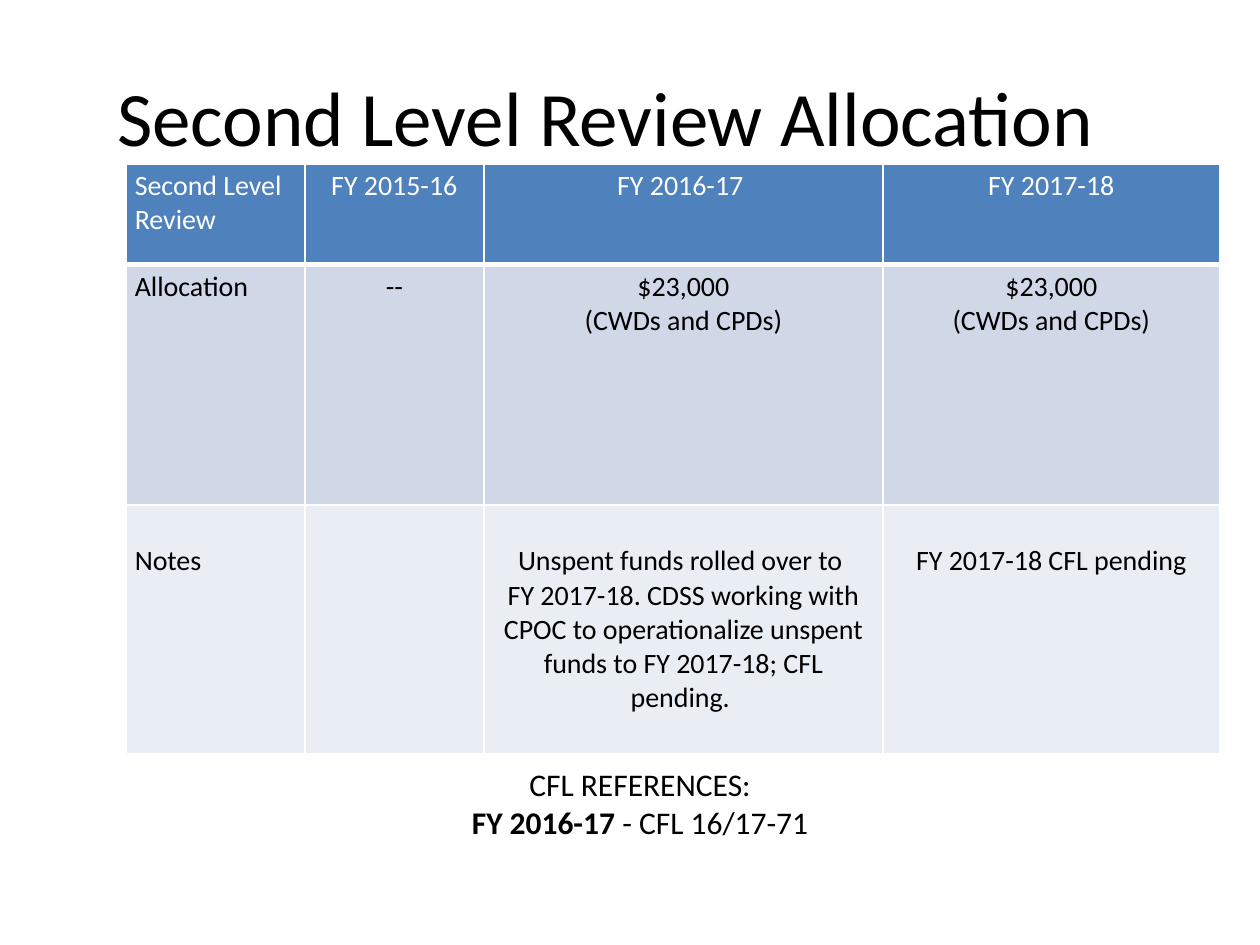
from pptx import Presentation
from pptx.dml.color import RGBColor
from pptx.enum.text import MSO_ANCHOR, PP_ALIGN
from pptx.oxml import parse_xml
from pptx.oxml.ns import nsdecls
from pptx.util import Inches, Pt

BLACK = RGBColor(0x00, 0x00, 0x00)
WHITE = RGBColor(0xFF, 0xFF, 0xFF)
HEADER_BLUE = RGBColor(0x4F, 0x81, 0xBD)
BAND_DARK = RGBColor(0xD0, 0xD8, 0xE8)
BAND_LIGHT = RGBColor(0xE9, 0xED, 0xF4)


def add_text(p, text, size=16, color=BLACK, bold=False, align=PP_ALIGN.LEFT):
    p.alignment = align
    r = p.add_run()
    r.text = text
    r.font.name = "Calibri"
    r.font.size = Pt(size)
    r.font.bold = bold
    r.font.color.rgb = color


def set_borders(cell, bottom):
    tcPr = cell._tc.get_or_add_tcPr()
    for i, (side, width) in enumerate((("L", 1), ("R", 1), ("T", 1), ("B", bottom))):
        tcPr.insert(i, parse_xml(
            f'<a:ln{side} {nsdecls("a")} w="{Pt(width)}"><a:solidFill>'
            f'<a:srgbClr val="{WHITE}"/></a:solidFill></a:ln{side}>'))


prs = Presentation()
prs.slide_width, prs.slide_height = Inches(10), Inches(7.5)
s = prs.slides.add_slide(prs.slide_layouts[5])

# Title
title = s.shapes.title
title.left, title.top = Inches(0.83), Inches(0.29)
title.width, title.height = Inches(8.83), Inches(1.25)
title.text_frame.vertical_anchor = MSO_ANCHOR.MIDDLE
add_text(title.text_frame.paragraphs[0], "Second Level Review Allocation", size=44)

# Allocation table: one list of paragraphs per cell
allocation = ["$23,000", "(CWDs and CPDs)"]
rows = [
    [["Second Level Review"], ["FY 2015-16"], ["FY 2016-17 "], ["FY 2017-18"]],
    [["Allocation"], ["--"], allocation, allocation],
    [["Notes"], [],
     ["Unspent funds rolled over to ",
      "FY 2017-18. CDSS working with CPOC to operationalize unspent "
      "funds to FY 2017-18; CFL pending. "],
     ["FY 2017-18 CFL pending"]],
]
col_widths = [1.42, 1.42, 3.17, 2.67]
# Height, fill, text colour, top margin and bottom border of each row
row_formats = [
    (0.8, HEADER_BLUE, WHITE, 0.04, 3),
    (1.91, BAND_DARK, BLACK, 0.04, 1),
    (1.97, BAND_LIGHT, BLACK, 0.31, 1),
]
table = s.shapes.add_table(3, 4, Inches(1), Inches(1.3),
                           Inches(8.67), Inches(4.68)).table
for column, width in zip(table.columns, col_widths):
    column.width = Inches(width)
for i, (height, fill, color, top, bottom) in enumerate(row_formats):
    table.rows[i].height = Inches(height)
    for j, lines in enumerate(rows[i]):
        cell = table.cell(i, j)
        cell.margin_left = cell.margin_right = Inches(0.07)
        cell.margin_top, cell.margin_bottom = Inches(top), Inches(0.04)
        cell.fill.solid()
        cell.fill.fore_color.rgb = fill
        set_borders(cell, bottom)
        tf = cell.text_frame
        for k, line in enumerate(lines):
            p = tf.add_paragraph() if k else tf.paragraphs[0]
            add_text(p, line, color=color,
                     align=PP_ALIGN.CENTER if j else PP_ALIGN.LEFT)

# References below the table
tf = s.shapes.add_textbox(Inches(2.57), Inches(6.02),
                          Inches(5.02), Inches(0.98)).text_frame
tf.word_wrap = True
add_text(tf.paragraphs[0], "CFL REFERENCES:", size=18, align=PP_ALIGN.CENTER)
p = tf.add_paragraph()
add_text(p, "FY 2016-17 ", size=18, bold=True, align=PP_ALIGN.CENTER)
add_text(p, "- CFL 16/17-71", size=18, align=PP_ALIGN.CENTER)

prs.save("out.pptx")
